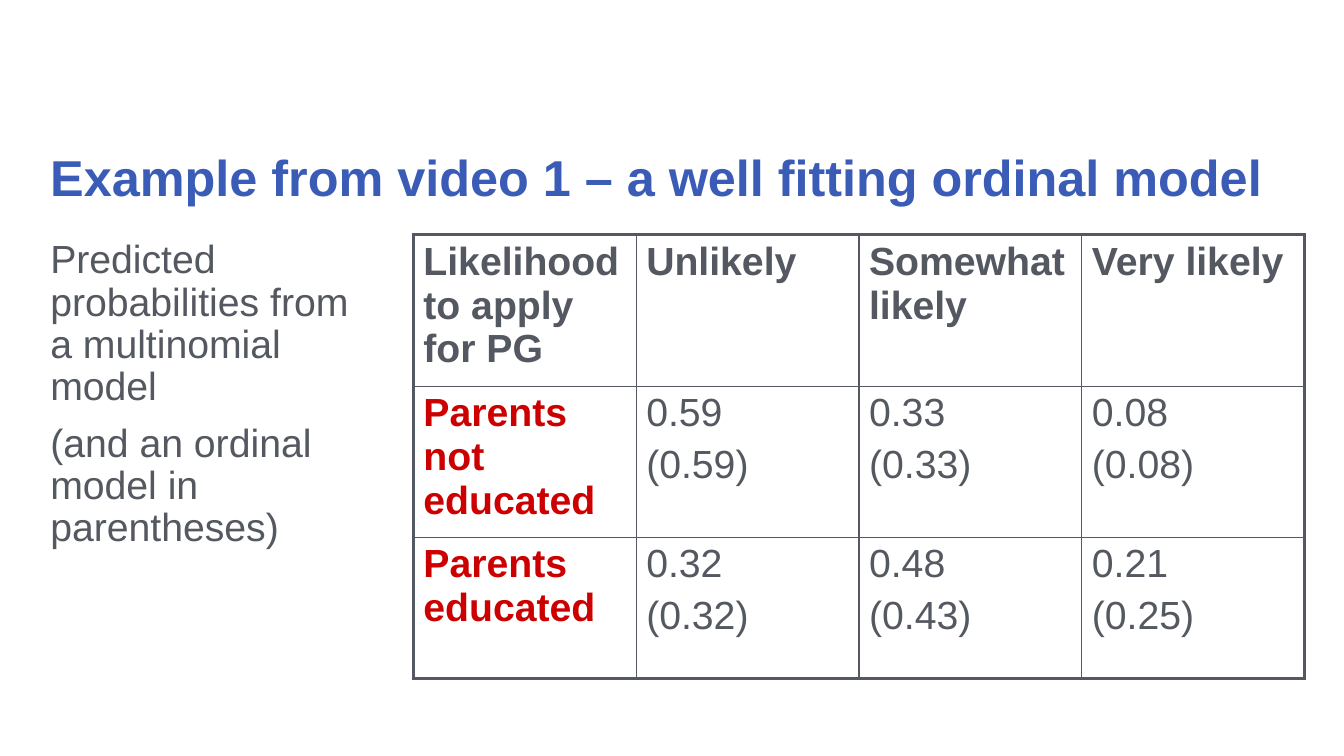
import pptx
import pptx.util
import pptx.dml.color
import pptx.enum.text
import pptx.oxml

COLORS = {"title": "3A5CB7", "text": "545860", "accent": "CC0000"}
FONT = "Arial"
PX = 9144
NS = "http://schemas.openxmlformats.org/drawingml/2006/main"


def write(tf, text, size=28, color="text", bold=False, line=1.0, before=0):
    tf.word_wrap = True
    for i, content in enumerate(text.split("\n")):
        p = tf.paragraphs[0] if i == 0 else tf.add_paragraph()
        p.line_spacing = line
        p.space_before = pptx.util.Pt(before if i else 0)
        r = p.add_run()
        r.text = content
        r.font.name = FONT
        r.font.size = pptx.util.Pt(size)
        r.font.bold = bold
        r.font.color.rgb = pptx.dml.color.RGBColor.from_string(COLORS[color])


class Deck:
    def __init__(self, width, height):
        self.prs = pptx.Presentation()
        self.prs.slide_width = width * PX
        self.prs.slide_height = height * PX
        self.s = self.prs.slides.add_slide(self.prs.slide_layouts[6])

    def text(self, x, y, w, h, text, anchor="TOP", **style):
        sp = self.s.shapes.add_textbox(x * PX, y * PX, w * PX, h * PX)
        sp.text_frame.vertical_anchor = pptx.enum.text.MSO_ANCHOR[anchor]
        write(sp.text_frame, text, **style)

    def border(self, cell, widths):
        tcPr = cell._tc.get_or_add_tcPr()
        for i, (side, width) in enumerate(widths.items()):
            ln = pptx.oxml.parse_xml(
                f'<a:ln{side} xmlns:a="{NS}" w="{pptx.util.Pt(width)}"><a:solidFill>'
                f'<a:srgbClr val="{COLORS["text"]}"/></a:solidFill></a:ln{side}>')
            tcPr.insert(i, ln)

    def table(self, x, y, col_w, row_h, rows):
        n_rows, n_cols = len(rows), len(rows[0])
        sp = self.s.shapes.add_table(n_rows, n_cols, x * PX, y * PX,
                                     n_cols * col_w * PX, n_rows * row_h * PX)
        table = sp.table
        table.first_row = table.horz_banding = False
        for col in table.columns:
            col.width = col_w * PX
        for i, row in enumerate(rows):
            table.rows[i].height = row_h * PX
            for j, text in enumerate(row):
                cell = table.cell(i, j)
                cell.fill.background()
                write(cell.text_frame, text, bold=i == 0 or j == 0,
                      color="accent" if i and j == 0 else "text", before=5.6)
                edges = {"L": j == 0, "R": j == n_cols - 1,
                         "T": i == 0, "B": i == n_rows - 1}
                self.border(cell, {k: 2.25 if outer else 1 for k, outer in edges.items()})


def main():
    deck = Deck(1333, 750)
    deck.text(40, 106, 1254, 145, "Example from video 1 – a well fitting ordinal model",
              anchor="MIDDLE", size=36, color="title", bold=True, line=0.9)
    deck.text(40, 233, 342, 447, "Predicted probabilities from a multinomial model\n"
              "(and an ordinal model in parentheses)", line=0.9, before=10)
    deck.table(410, 233, 221, 140, [
        ["Likelihood to apply for PG", "Unlikely", "Somewhat likely", "Very likely"],
        ["Parents not educated", "0.59\n(0.59)", "0.33\n(0.33)", "0.08\n(0.08)"],
        ["Parents educated", "0.32\n(0.32)", "0.48\n(0.43)", "0.21\n(0.25)"],
    ])
    deck.prs.save("out.pptx")


if __name__ == "__main__":
    main()
